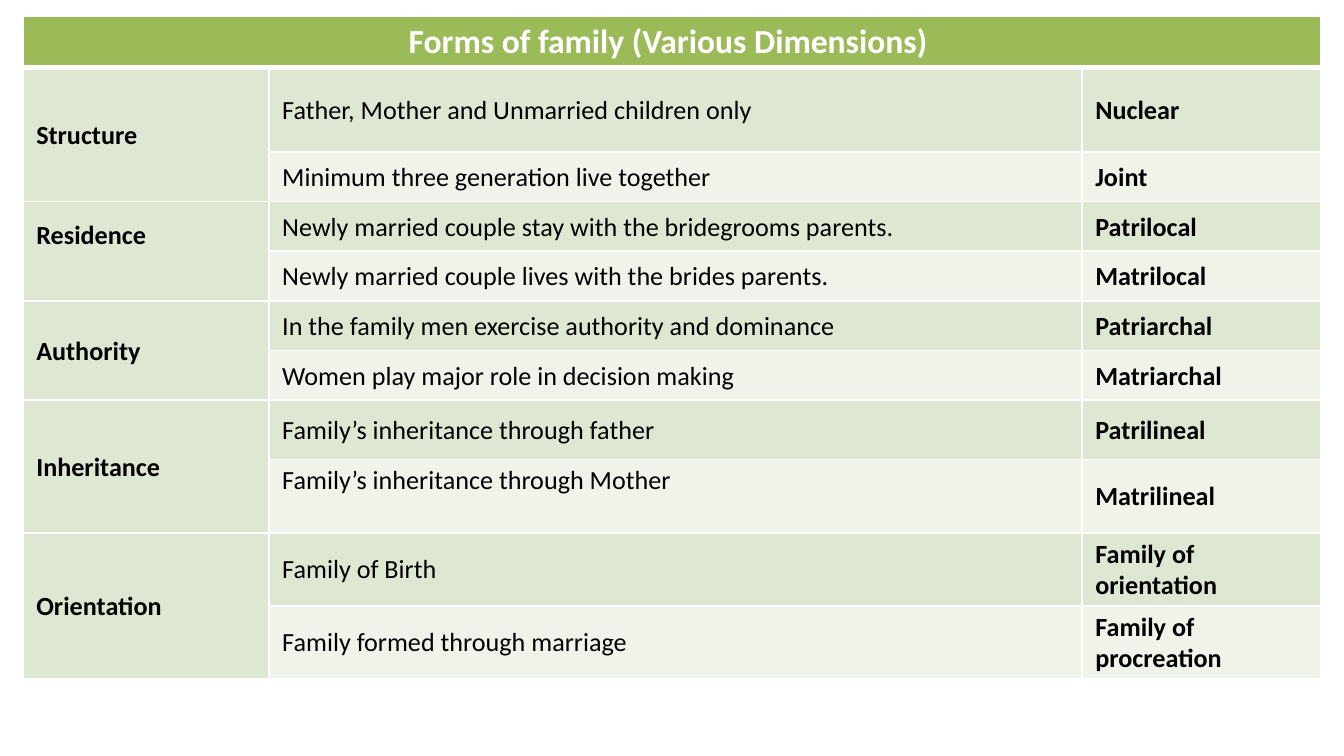
"""Build a one-slide table of the forms of family by dimension."""
import pptx
import pptx.dml.color
import pptx.enum.text
import pptx.oxml
import pptx.oxml.ns
import pptx.util

Inches = pptx.util.Inches
Pt = pptx.util.Pt
ANCHOR = pptx.enum.text.MSO_ANCHOR
ALIGN = pptx.enum.text.PP_ALIGN

COLUMNS = [1.83, 6.05, 1.78]
ROWS = [0.38, 0.63] + [0.37] * 5 + [0.44] + [0.53] * 3
HEADING = "Forms of family (Various Dimensions) "
RAISED = ["Residence", "Family’s inheritance through Mother"]
DIMENSIONS = {
    "Structure": [
        ("Father, Mother and Unmarried children only", "Nuclear"),
        ("Minimum three generation live together", "Joint"),
    ],
    "Residence": [
        ("Newly married couple stay with the bridegrooms parents.", "Patrilocal"),
        ("Newly married couple lives with the brides parents.", "Matrilocal"),
    ],
    "Authority": [
        ("In the family men exercise authority and dominance", "Patriarchal"),
        ("Women play major role in decision making", "Matriarchal"),
    ],
    "Inheritance": [
        ("Family’s inheritance through father", "Patrilineal"),
        ("Family’s inheritance through Mother", "Matrilineal"),
    ],
    "Orientation": [
        ("Family of Birth", "Family of orientation"),
        ("Family formed through marriage", "Family of procreation"),
    ],
}


def color(code):
    return pptx.dml.color.RGBColor.from_string(code)


def apply(target, values):
    for name, value in values.items():
        setattr(target, name, value)


class FamilySlide:
    font = "Calibri"
    green, band, pale = "9BBB59", "DEE7D1", "EFF3EA"
    black, white = "000000", "FFFFFF"

    def __init__(self, deck):
        self.slide = deck.slides.add_slide(deck.slide_layouts[6])

    def table(self, left, top, columns, rows):
        frame = self.slide.shapes.add_table(
            len(rows), len(columns), Inches(left), Inches(top),
            Inches(sum(columns)), Inches(sum(rows)))
        table = frame.table
        for column, width in zip(table.columns, columns):
            column.width = Inches(width)
        for row, height in zip(table.rows, rows):
            row.height = Inches(height)
        return table

    def surface(self, cell, fill, top=1, bottom=1):
        cell.fill.solid()
        cell.fill.fore_color.rgb = color(fill)
        properties = cell._tc.get_or_add_tcPr()
        namespace = pptx.oxml.ns.nsdecls("a")
        widths = {"lnL": 1, "lnR": 1, "lnT": top, "lnB": bottom}
        for index, (side, width) in enumerate(widths.items()):
            properties.insert(index, pptx.oxml.parse_xml(
                f'<a:{side} {namespace} w="{Pt(width)}"><a:solidFill>'
                f'<a:srgbClr val="{self.white}"/></a:solidFill></a:{side}>'))

    def text(self, cell, words, size=14, bold=True, ink=black,
             align=ALIGN.LEFT, anchor=ANCHOR.MIDDLE):
        bottom = 0.27 if words in RAISED else 0.03
        apply(cell, {
            "margin_left": Inches(0.1), "margin_right": Inches(0.1),
            "margin_top": Inches(0.04), "margin_bottom": Inches(bottom),
            "vertical_anchor": anchor})
        para = cell.text_frame.paragraphs[0]
        para.alignment = align
        span = para.add_run()
        span.text = words
        apply(span.font, {"name": self.font, "size": Pt(size), "bold": bold})
        span.font.color.rgb = color(ink)


def main():
    deck = pptx.Presentation()
    width = Inches(10)
    apply(deck, {"slide_width": width, "slide_height": width * 9 // 16})
    page = FamilySlide(deck)
    table = page.table(0.17, 0.12, COLUMNS, ROWS)

    for column in range(len(COLUMNS)):
        page.surface(table.cell(0, column), page.green, bottom=3)
        for row in range(1, len(ROWS)):
            banded = column == 0 or row % 2 == 1
            page.surface(table.cell(row, column),
                         page.band if banded else page.pale,
                         top=3 if row == 1 else 1)

    heading = table.cell(0, 0)
    heading.merge(table.cell(0, len(COLUMNS) - 1))
    page.text(heading, HEADING, size=18, ink=page.white,
              align=ALIGN.CENTER, anchor=ANCHOR.TOP)

    row = 1
    for dimension, forms in DIMENSIONS.items():
        label = table.cell(row, 0)
        label.merge(table.cell(row + len(forms) - 1, 0))
        page.text(label, dimension)
        for description, form in forms:
            page.text(table.cell(row, 1), description, bold=False)
            page.text(table.cell(row, 2), form)
            row += 1

    deck.save("out.pptx")


if __name__ == "__main__":
    main()
